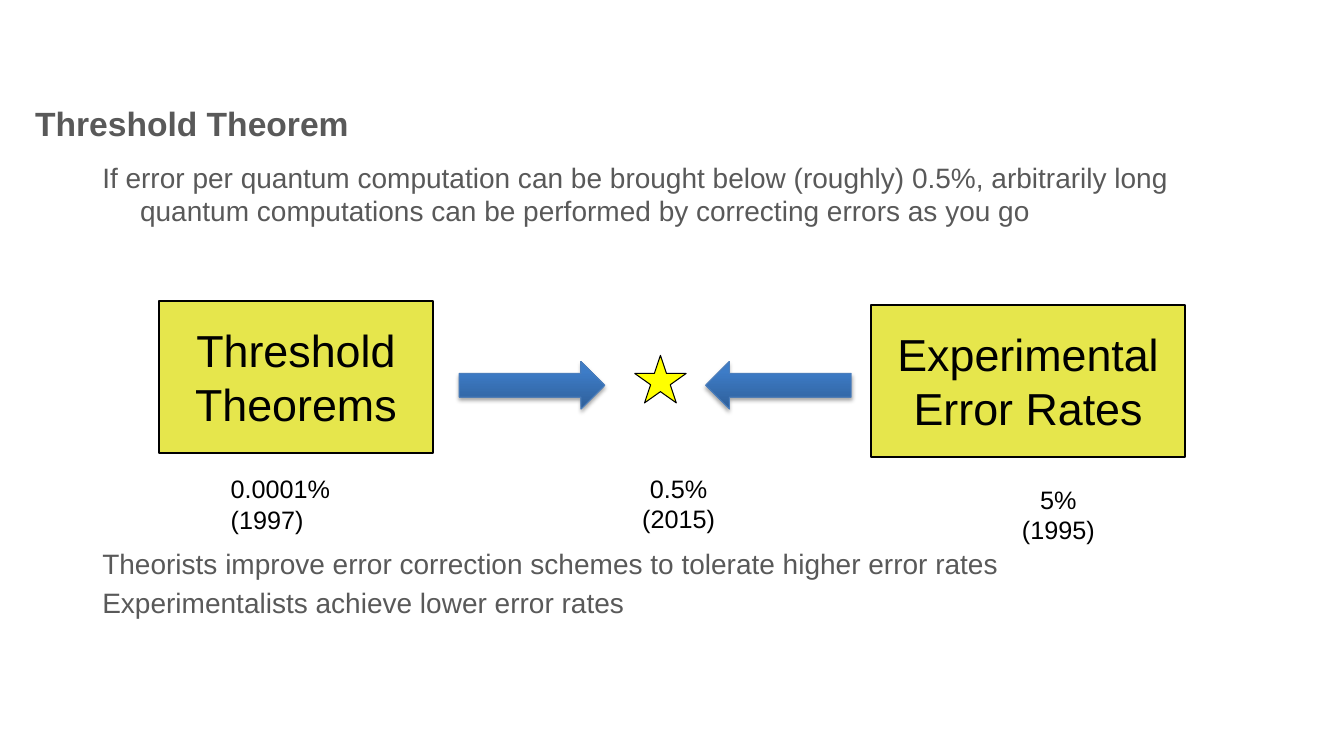
"""Build the Threshold Theorem slide."""
import dataclasses

import pptx
import pptx.dml.color
import pptx.enum.shapes
import pptx.enum.text
import pptx.oxml
import pptx.oxml.ns
import pptx.util

Pt = pptx.util.Pt
SHAPE = pptx.enum.shapes.MSO_SHAPE
ALIGN = pptx.enum.text.PP_ALIGN
ANCHOR = pptx.enum.text.MSO_ANCHOR


def color(code):
    return pptx.dml.color.RGBColor.from_string(code)


def apply(target, values):
    for name, value in values.items():
        setattr(target, name, value)


@dataclasses.dataclass(frozen=True)
class Theme:
    font: str = "Arial"
    gray: str = "595959"
    black: str = "000000"
    panel: str = "E6E64C"
    star: str = "FFFF00"
    arrow_dark: str = "2F5F99"
    arrow_light: str = "3D7CC7"
    arrow_line: str = "4B7EBC"
    title_size: int = 24
    body_size: int = 20
    panel_size: int = 32
    label_size: int = 18


class SlideBuilder:
    """Holds the theme and the current page, and draws each kind of element."""

    def __init__(self, page, theme):
        self.page = page
        self.theme = theme

    def add_lines(self, box, lines, size, ink, frame=None, para_format=None, bold=False, gap=0):
        apply(box.text_frame, {"word_wrap": True, **(frame or {})})
        for index, line in enumerate(lines):
            para = box.text_frame.paragraphs[0] if index == 0 else box.text_frame.add_paragraph()
            apply(para, {"alignment": ALIGN.LEFT, **(para_format or {})})
            if index:
                para.space_before = Pt(gap)
            span = para.add_run()
            span.text = line
            apply(span.font, {"name": self.theme.font, "size": Pt(size), "bold": bold})
            span.font.color.rgb = color(ink)

    def text_box(self, area):
        return self.page.shapes.add_textbox(*map(Pt, area))

    def title(self, area, text):
        self.add_lines(self.text_box(area), [text], self.theme.title_size, self.theme.gray,
                       {"vertical_anchor": ANCHOR.BOTTOM}, {"line_spacing": Pt(26)}, bold=True)

    def body(self, area, lines):
        box = self.text_box(area)
        self.add_lines(box, lines, self.theme.body_size, self.theme.gray, gap=4)
        for para in box.text_frame.paragraphs:
            properties = para._p.get_or_add_pPr()
            properties.set("marL", str(int(Pt(27))))
            properties.set("indent", str(-int(Pt(27))))

    def label(self, area, lines, alignment=ALIGN.CENTER):
        self.add_lines(self.text_box(area), lines, self.theme.label_size, self.theme.black,
                       para_format={"alignment": alignment})

    def shape(self, kind, area, line, width):
        box = self.page.shapes.add_shape(kind, *map(Pt, area))
        box.shadow.inherit = False
        box.line.color.rgb = color(line)
        box.line.width = Pt(width)
        return box

    def solid(self, kind, area, fill, width=0.75):
        box = self.shape(kind, area, self.theme.black, width)
        box.fill.solid()
        box.fill.fore_color.rgb = color(fill)
        return box

    def panel(self, area, lines):
        box = self.solid(SHAPE.RECTANGLE, area, self.theme.panel, 1.45)
        frame = {"word_wrap": False, "vertical_anchor": ANCHOR.MIDDLE}
        self.add_lines(box, lines, self.theme.panel_size, self.theme.black, frame,
                       {"alignment": ALIGN.CENTER})

    def arrow(self, kind, area):
        box = self.shape(kind, area, self.theme.arrow_line, 0.75)
        box.fill.gradient()
        box.fill.gradient_angle = 90
        stops = ((0, self.theme.arrow_dark), (0.8, self.theme.arrow_light))
        for stop, (position, code) in zip(box.fill.gradient_stops, stops):
            stop.position = position
            stop.color.rgb = color(code)
        effects = box.element.spPr.find(pptx.oxml.ns.qn("a:effectLst"))
        effects.append(pptx.oxml.parse_xml(
            f'<a:outerShdw {pptx.oxml.ns.nsdecls("a")} blurRad="{int(Pt(3.1))}" '
            f'dist="{int(Pt(1.8))}" dir="5400000" rotWithShape="0"><a:srgbClr val="000000">'
            '<a:alpha val="35000"/></a:srgbClr></a:outerShdw>'))


def main():
    deck = pptx.Presentation()
    apply(deck, {"slide_width": Pt(960), "slide_height": Pt(540)})
    slide = SlideBuilder(deck.slides.add_slide(deck.slide_layouts[6]), Theme())

    slide.title((18, 46, 888, 60), "Threshold Theorem")
    slide.body((66, 111, 828, 60), [
        "If error per quantum computation can be brought below (roughly) 0.5%, "
        "arbitrarily long quantum computations can be performed by correcting errors as you go"])
    slide.body((66, 387, 828, 64), [
        "Theorists improve error correction schemes to tolerate higher error rates",
        "Experimentalists achieve lower error rates"])

    slide.panel((113.5, 214.8, 196, 108.5), ["Threshold", "Theorems"])
    slide.panel((622.5, 217.8, 224, 108.5), ["Experimental", "Error Rates"])
    slide.solid(SHAPE.STAR_5_POINT, (453.4, 253.8, 36.7, 34), slide.theme.star)
    slide.arrow(SHAPE.RIGHT_ARROW, (328, 258.2, 104, 34))
    slide.arrow(SHAPE.LEFT_ARROW, (504, 258.2, 104, 34))

    slide.label((157.7, 334.8, 105, 47.5), ["0.0001%", "(1997)"], ALIGN.LEFT)
    slide.label((440.8, 334.2, 88, 47.5), ["0.5%", "(2015)"])
    slide.label((712, 342.2, 88, 47.5), ["5%", "(1995)"])
    deck.save("out.pptx")


if __name__ == "__main__":
    main()
